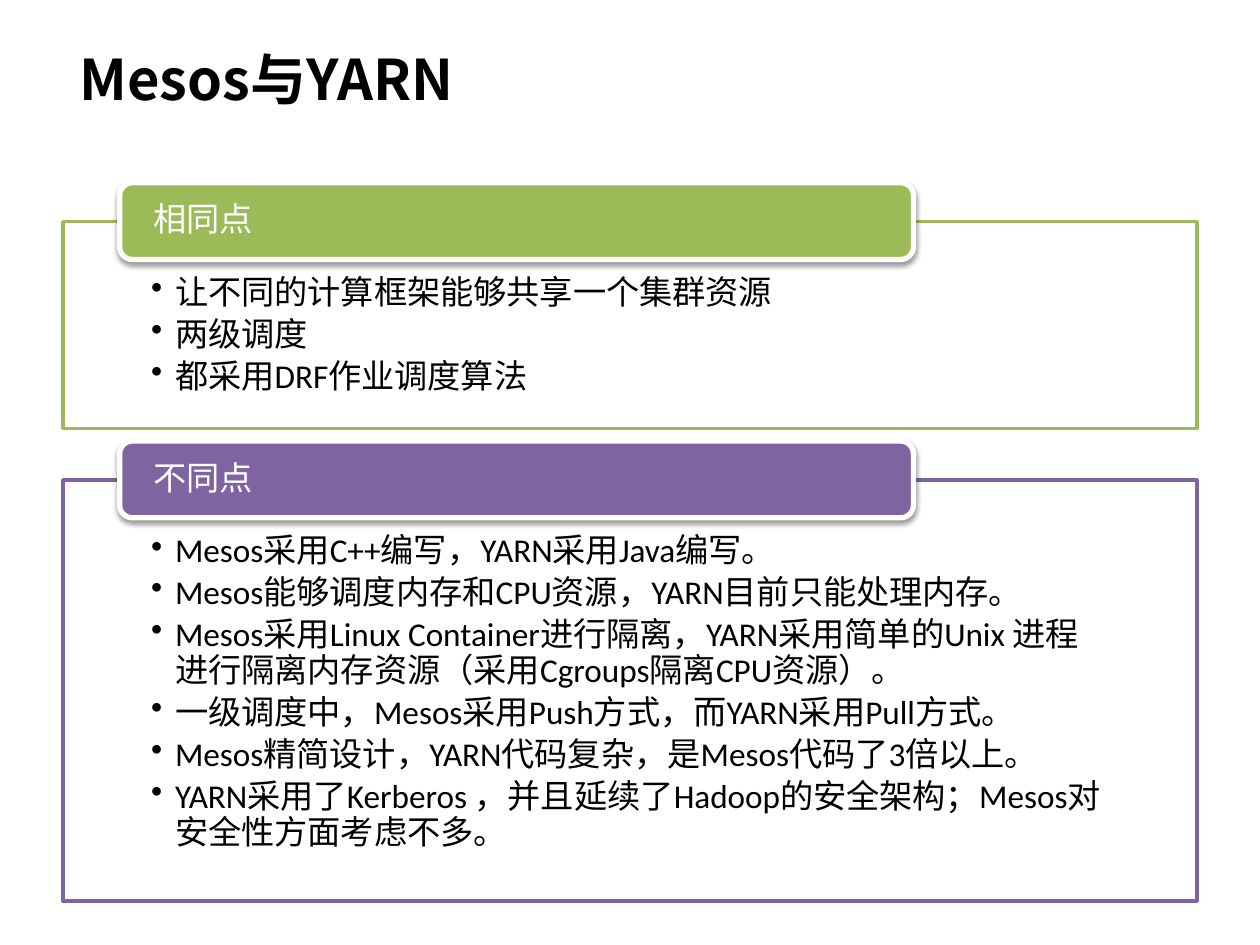
from lxml import etree
from pptx import Presentation, util as u
from pptx.dml.color import RGBColor
from pptx.enum import shapes, text
from pptx.oxml import parse_xml
from pptx.oxml.ns import nsdecls, qn

TITLE = "Mesos与YARN"
SECTIONS = [
    {"heading": "相同点", "color": "green", "top": 1.76, "height": 1.64, "points": [
        "让不同的计算框架能够共享一个集群资源",
        "两级调度",
        "都采用DRF作业调度算法",
    ]},
    {"heading": "不同点", "color": "purple", "top": 3.81, "height": 3.34, "points": [
        "Mesos采用C++编写，YARN采用Java编写。",
        "Mesos能够调度内存和CPU资源，YARN目前只能处理内存。",
        "Mesos采用Linux Container进行隔离，YARN采用简单的Unix 进程进行隔离内存资源（采用Cgroups隔离CPU资源）。",
        "一级调度中，Mesos采用Push方式，而YARN采用Pull方式。",
        "Mesos精简设计，YARN代码复杂，是Mesos代码了3倍以上。",
        "YARN采用了Kerberos ，并且延续了Hadoop的安全架构；Mesos对安全性方面考虑不多。",
    ]},
]
COLORS = {"black": "000000", "white": "FFFFFF", "green": "9BBB59", "purple": "8064A2"}
BODY_FONT, TITLE_FONT = "Calibri", "Noto Sans CJK SC"
PANEL_LEFT, PANEL_WIDTH = 0.5, 9
TAB_LEFT, TAB_WIDTH, TAB_HEIGHT, TAB_RISE = 0.95, 6.3, 0.61, 0.31
INDENT = 0.19


def rgb(name):
    """Return the named palette colour."""
    return RGBColor.from_string(COLORS[name])


def add_box(slide, preset, bounds, fill, line, line_width, insets, anchor):
    """Add a filled, outlined shape ready for text."""
    shape = slide.shapes.add_shape(preset, *map(u.Inches, bounds))
    shape.shadow.inherit = False
    shape.fill.solid()
    shape.fill.fore_color.rgb = rgb(fill)
    shape.line.color.rgb = rgb(line)
    shape.line.width = u.Pt(line_width)
    frame = shape.text_frame
    frame.word_wrap = True
    frame.vertical_anchor = anchor
    (frame.margin_left, frame.margin_top,
     frame.margin_right, frame.margin_bottom) = map(u.Inches, insets)
    return shape


def add_text(paragraph, content, color, size=19, font=BODY_FONT):
    """Add one left-aligned run to a paragraph."""
    paragraph.alignment = text.PP_ALIGN.LEFT
    run = paragraph.add_run()
    run.text = content
    run.font.size = u.Pt(size)
    run.font.name = font
    run.font.color.rgb = rgb(color)
    return run


def add_bullet(paragraph):
    """Give a paragraph a round bullet with a hanging indent."""
    paragraph.level = 1
    properties = paragraph._p.get_or_add_pPr()
    properties.set("marL", str(u.Inches(INDENT)))
    properties.set("indent", str(-u.Inches(INDENT)))
    etree.SubElement(properties, qn("a:buChar")).set("char", "•")


def add_shadow(shape):
    """Add a soft shadow just below a shape."""
    effects = shape._element.spPr.find(qn("a:effectLst"))
    effects.append(parse_xml(
        f'<a:outerShdw {nsdecls("a")} blurRad="{u.Pt(3.1)}" dist="{u.Pt(1.6)}" '
        f'dir="5400000" rotWithShape="0"><a:srgbClr val="{COLORS["black"]}">'
        '<a:alpha val="38000"/></a:srgbClr></a:outerShdw>'))


def add_section(slide, section):
    """Add an outlined panel of points with its heading tab."""
    panel = add_box(
        slide, shapes.MSO_SHAPE.RECTANGLE,
        (PANEL_LEFT, section["top"], PANEL_WIDTH, section["height"]),
        "white", section["color"], 2, (0.7, 0.43, 0.7, 0.15), text.MSO_ANCHOR.TOP)
    fill_color = panel._element.spPr.find(qn("a:solidFill"))[0]
    etree.SubElement(fill_color, qn("a:alpha")).set("val", "90000")
    frame = panel.text_frame
    for index, point in enumerate(section["points"]):
        paragraph = frame.add_paragraph() if index else frame.paragraphs[0]
        add_bullet(paragraph)
        paragraph.line_spacing = 0.9
        paragraph.space_after = u.Pt(3.4)
        add_text(paragraph, point, "black")

    tab = add_box(
        slide, shapes.MSO_SHAPE.ROUNDED_RECTANGLE,
        (TAB_LEFT, section["top"] - TAB_RISE, TAB_WIDTH, TAB_HEIGHT),
        section["color"], "white", 3, (0.24, 0, 0.24, 0), text.MSO_ANCHOR.MIDDLE)
    add_shadow(tab)
    heading = tab.text_frame.paragraphs[0]
    heading.line_spacing = 0.9
    add_text(heading, section["heading"], "white")


def add_title(slide):
    """Place and format the slide title."""
    title = slide.shapes.title
    title.left, title.top, title.width, title.height = map(u.Inches, (0.53, 0.3, 6.5, 0.85))
    title.text_frame.vertical_anchor = text.MSO_ANCHOR.TOP
    run = add_text(title.text_frame.paragraphs[0], TITLE, "black", 32, TITLE_FONT)
    run.font.bold = True
    etree.SubElement(run._r.get_or_add_rPr(), qn("a:ea")).set("typeface", TITLE_FONT)


def main():
    """Build the comparison slide."""
    presentation = Presentation()
    presentation.slide_width, presentation.slide_height = u.Inches(10), u.Inches(7.5)
    slide = presentation.slides.add_slide(presentation.slide_layouts[5])
    add_title(slide)
    for section in SECTIONS:
        add_section(slide, section)
    presentation.save("out.pptx")


if __name__ == "__main__":
    main()
